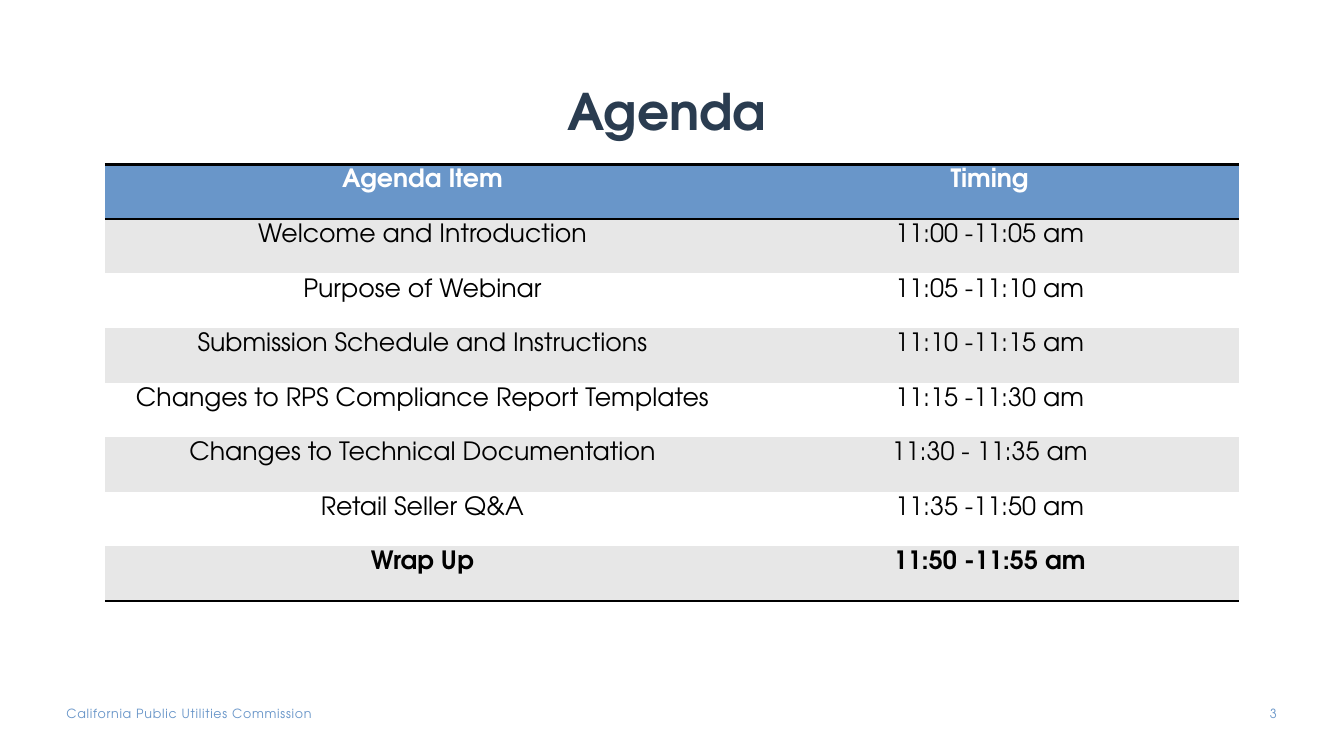
from typing import NamedTuple

from lxml.etree import SubElement
from pptx import Presentation
from pptx.dml.color import RGBColor
from pptx.enum.text import MSO_ANCHOR as Anchor, MSO_AUTO_SIZE as AutoSize, PP_ALIGN as Align
from pptx.oxml.ns import qn
from pptx.util import Inches, Pt

FONT = "TeX Gyre Adventor"
NAVY, BLUE, GRAY, WHITE, BLACK = "2A3C50", "6996C9", "E7E7E7", "FFFFFF", "000000"
PLAIN_TABLE = "{2D5ABB26-0587-4C30-8999-92F81FD0307C}"
SLIDE_WIDTH, SLIDE_HEIGHT = Inches(13.33), Inches(7.5)
COLUMN_SHARES = (0.56, 0.44)


class Box(NamedTuple):
    left: float
    top: float
    width: float
    height: float

    def lengths(self) -> tuple[int, int, int, int]:
        return (
            int(SLIDE_WIDTH * self.left / 100),
            int(SLIDE_HEIGHT * self.top / 100),
            int(SLIDE_WIDTH * self.width / 100),
            int(SLIDE_HEIGHT * self.height / 100),
        )


class AgendaRow(NamedTuple):
    item: str
    timing: str
    fill: str = GRAY
    color: str = BLACK
    bold: bool = False
    edges: tuple[str, ...] = ()


class Label(NamedTuple):
    text: str
    box: Box
    align: Align
    spacing: int = 0


TITLE_BOX = Box(5, 5.33, 90, 14)
TABLE_BOX = Box(7.8, 21.73, 84.4, 57.75)

AGENDA = (
    AgendaRow("Agenda Item", "Timing", BLUE, WHITE, True, ("a:lnT", "a:lnB")),
    AgendaRow("Welcome and Introduction", "11:00 -11:05 am"),
    AgendaRow("Purpose of Webinar", "11:05 -11:10 am", WHITE),
    AgendaRow("Submission Schedule and Instructions", "11:10 -11:15 am"),
    AgendaRow("Changes to RPS Compliance Report Templates", "11:15 -11:30 am", WHITE),
    AgendaRow("Changes to Technical Documentation", "11:30 - 11:35 am"),
    AgendaRow("Retail Seller Q&A", "11:35 -11:50 am", WHITE),
    AgendaRow("Wrap Up", "11:50 -11:55 am", bold=True, edges=("a:lnB",)),
)

FOOTER = (
    Label("California Public Utilities Commission", Box(4.95, 93.33, 24, 2), Align.LEFT, 50),
    Label("3", Box(91.85, 93.33, 3.15, 2.67), Align.RIGHT),
)


def rgb(value: str) -> RGBColor:
    return RGBColor.from_string(value)


def write(frame, text: str, *, size: float, color: str, bold: bool = False,
          align: Align = Align.CENTER, line_spacing: float = 1.0, spacing: int = 0) -> None:
    paragraph = frame.paragraphs[0]
    paragraph.alignment = align
    paragraph.line_spacing = line_spacing
    run = paragraph.add_run()
    run.text = text
    run.font.name = FONT
    run.font.size = Pt(size)
    run.font.bold = bold
    run.font.color.rgb = rgb(color)
    if spacing:
        run.font._element.set("spc", str(spacing))


def place(shape, box: Box) -> None:
    shape.left, shape.top, shape.width, shape.height = box.lengths()


def set_margins(frame, left: float, top: float, right: float, bottom: float) -> None:
    frame.margin_left, frame.margin_top = Inches(left), Inches(top)
    frame.margin_right, frame.margin_bottom = Inches(right), Inches(bottom)


def add_edge(cell, edge: str) -> None:
    properties = cell._tc.get_or_add_tcPr()
    line = SubElement(properties, qn(edge), w=str(Pt(2)))
    SubElement(SubElement(line, qn("a:solidFill")), qn("a:srgbClr"), val=BLACK)


def draw_title(slide) -> None:
    title = slide.shapes.title
    place(title, TITLE_BOX)
    frame = title.text_frame
    frame.word_wrap = True
    frame.auto_size = AutoSize.NONE
    frame.vertical_anchor = Anchor.BOTTOM
    set_margins(frame, 0, 0.05, 0.1, 0.05)
    write(frame, "Agenda", size=36, color=NAVY, bold=True, line_spacing=0.9)


def draw_agenda(slide) -> None:
    shape = slide.shapes.add_table(len(AGENDA), len(COLUMN_SHARES), *TABLE_BOX.lengths())
    for style in shape._element.iter(qn("a:tableStyleId")):
        style.text = PLAIN_TABLE
    table = shape.table
    table.horz_banding = False
    table_width = shape.width
    for column, share in zip(table.columns, COLUMN_SHARES):
        column.width = int(table_width * share)
    for table_row, entry in zip(table.rows, AGENDA):
        for cell, text in zip(table_row.cells, (entry.item, entry.timing)):
            set_margins(cell, 0.1, 0.05, 0.1, 0.05)
            cell.vertical_anchor = Anchor.TOP
            for edge in entry.edges:
                add_edge(cell, edge)
            cell.fill.solid()
            cell.fill.fore_color.rgb = rgb(entry.fill)
            write(cell.text_frame, text, size=18, color=entry.color, bold=entry.bold)


def draw_label(slide, label: Label) -> None:
    frame = slide.shapes.add_textbox(*label.box.lengths()).text_frame
    frame.word_wrap = True
    set_margins(frame, 0, 0, 0, 0)
    write(frame, label.text, size=9, color=BLUE, align=label.align, spacing=label.spacing)


def main() -> None:
    presentation = Presentation()
    presentation.slide_width, presentation.slide_height = SLIDE_WIDTH, SLIDE_HEIGHT
    slide = presentation.slides.add_slide(presentation.slide_layouts[5])
    draw_title(slide)
    draw_agenda(slide)
    for label in FOOTER:
        draw_label(slide, label)
    presentation.save("out.pptx")


if __name__ == "__main__":
    main()
